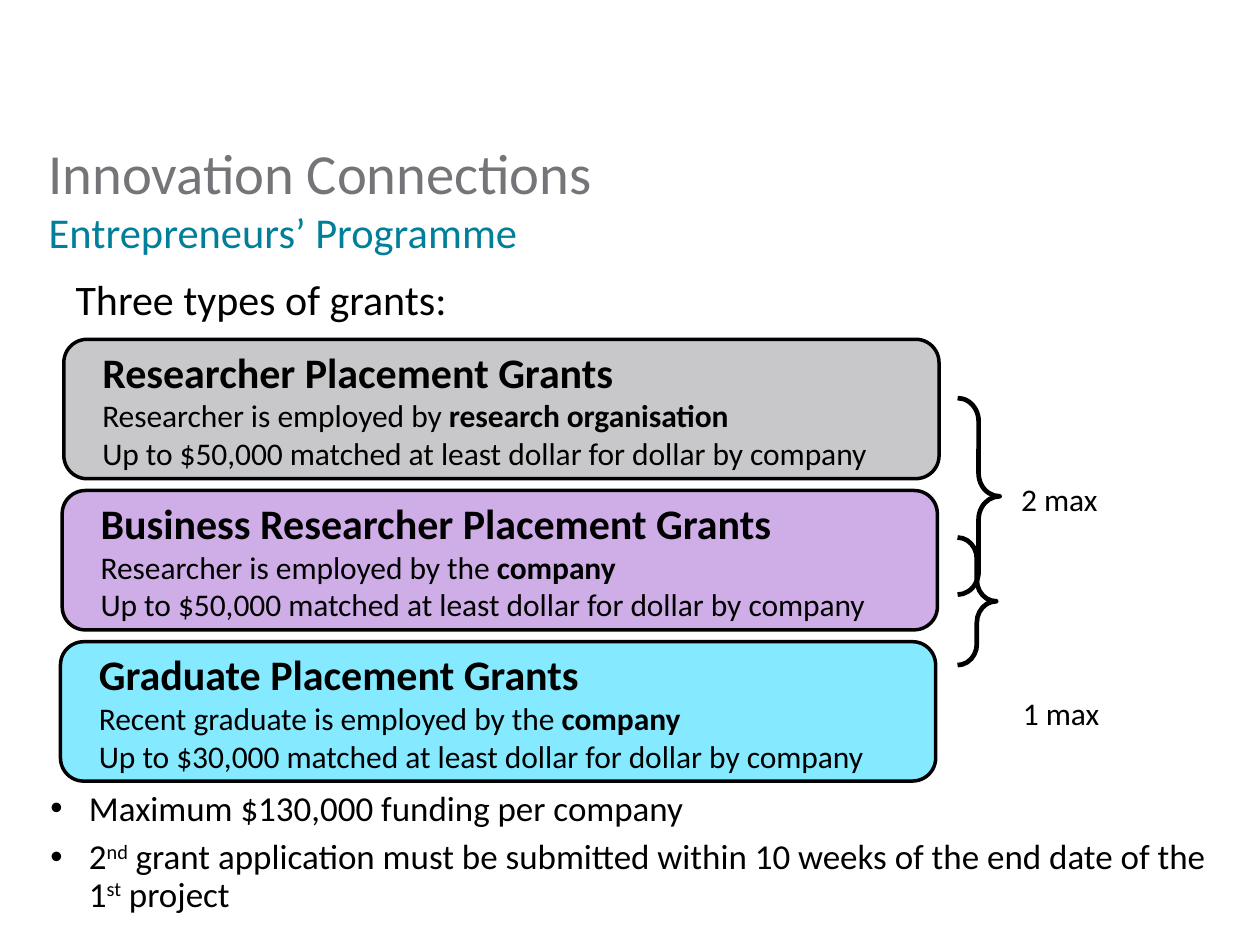
from lxml import etree
from pptx import Presentation
from pptx.dml.color import RGBColor
from pptx.enum.shapes import MSO_SHAPE
from pptx.enum.text import MSO_ANCHOR, PP_ALIGN
from pptx.oxml.ns import qn
from pptx.util import Inches, Pt

ROUNDED = MSO_SHAPE.ROUNDED_RECTANGLE
BRACE = MSO_SHAPE.RIGHT_BRACE
TOP, MIDDLE = MSO_ANCHOR.TOP, MSO_ANCHOR.MIDDLE
LEFT = PP_ALIGN.LEFT

BLACK = RGBColor(0x00, 0x00, 0x00)
TITLE_GREY = RGBColor(0x75, 0x75, 0x79)
TEAL = RGBColor(0x00, 0x7F, 0x9B)
CARD_GREY = RGBColor(0xC8, 0xC8, 0xCA)
CARD_PURPLE = RGBColor(0xCF, 0xAE, 0xE8)
CARD_CYAN = RGBColor(0x85, 0xE9, 0xFF)

GRANTS = [
    (0.38, CARD_GREY, "Researcher Placement Grants",
     "Researcher is employed by ", "research organisation", "$50,000"),
    (0.37, CARD_PURPLE, "Business Researcher Placement Grants",
     "Researcher is employed by the ", "company", "$50,000"),
    (0.36, CARD_CYAN, "Graduate Placement Grants",
     "Recent graduate is employed by the ", "company", "$30,000"),
]
CARD_TOP, CARD_STEP = 2.02, 0.9
BRACES = [(2.37, 0.25, 1.17), (3.2, 0.23, 0.76)]
LIMITS = [(5.98, 2.81, "2 max"), (5.99, 4.08, "1 max")]
CONDITIONS = [
    [("Maximum $130,000 funding per company", False)],
    [("2", False), ("nd", True),
     (" grant application must be submitted within 10 weeks of the end date of the 1", False),
     ("st", True), (" project", False)],
]


class SlideBuilder:
    font_name = "Calibri"

    def __init__(self, slide):
        self.slide = slide

    def set_frame(self, frame, margins, anchor=TOP, wrap=True):
        frame.word_wrap = wrap
        frame.vertical_anchor = anchor
        (frame.margin_left, frame.margin_top,
         frame.margin_right, frame.margin_bottom) = [Inches(m) for m in margins]

    def text_box(self, box, margins=(0, 0, 0, 0.05), wrap=True):
        frame = self.slide.shapes.add_textbox(*[Inches(v) for v in box]).text_frame
        self.set_frame(frame, margins, wrap=wrap)
        return frame

    def paragraph(self, frame, index, indent=0, hanging=0):
        paragraph = frame.add_paragraph() if index else frame.paragraphs[0]
        paragraph.alignment = LEFT
        properties = paragraph._p.get_or_add_pPr()
        properties.set("marL", str(Inches(indent)))
        properties.set("indent", str(Inches(-hanging)))
        return paragraph

    def run(self, paragraph, text, size, color=BLACK, bold=False, raised=False):
        run = paragraph.add_run()
        run.text = text
        font = run.font
        font.name, font.size, font.bold = self.font_name, Pt(size), bold
        font.color.rgb = color
        if raised:
            run._r.get_or_add_rPr().set("baseline", "30000")

    def title(self, box, text, subtitle):
        paragraph = self.paragraph(self.text_box(box, (0, 0, 0, 0)), 0)
        self.run(paragraph, text, 24.3, TITLE_GREY)
        paragraph.add_line_break()
        self.run(paragraph, subtitle, 18.2, TEAL)

    def heading(self, box, text):
        paragraph = self.paragraph(self.text_box(box), 0, 0.09)
        paragraph.line_spacing = 0.9
        self.run(paragraph, text, 18)

    def label(self, box, text):
        frame = self.text_box(box, (0.1, 0.05, 0.1, 0.05), wrap=False)
        self.run(self.paragraph(frame, 0), text, 13.5)

    def outlined_shape(self, kind, box, width):
        shape = self.slide.shapes.add_shape(kind, *[Inches(v) for v in box])
        shape.shadow.inherit = False
        shape.line.color.rgb = BLACK
        shape.line.width = Pt(width)
        return shape

    def card(self, box, fill, name, employment, employer, amount):
        shape = self.outlined_shape(ROUNDED, box, 1.5)
        shape.fill.solid()
        shape.fill.fore_color.rgb = fill
        frame = shape.text_frame
        self.set_frame(frame, (0.1, 0.06, 0.1, 0.06), MIDDLE)
        lines = [
            [(name, 18, True)],
            [(employment, 13.5, False), (employer, 13.5, True)],
            [(f"Up to {amount} matched at least dollar for dollar by company", 13.5, False)],
        ]
        for index, runs in enumerate(lines):
            paragraph = self.paragraph(frame, index, 0.09)
            for text, size, bold in runs:
                self.run(paragraph, text, size, bold=bold)

    def brace(self, box):
        shape = self.outlined_shape(BRACE, box, 2)
        shape.fill.background()
        shape.adjustments[0] = 0.55
        shape.adjustments[1] = 0.5

    def bullets(self, box, items):
        frame = self.text_box(box)
        for index, runs in enumerate(items):
            paragraph = self.paragraph(frame, index, 0.32, 0.23)
            properties = paragraph._p.get_or_add_pPr()
            etree.SubElement(properties, qn("a:buFont")).set("typeface", "Arial")
            etree.SubElement(properties, qn("a:buChar")).set("char", "•")
            paragraph.line_spacing = 0.9
            paragraph.space_before = Pt(2.2 if index else 0)
            paragraph.space_after = Pt(2.2)
            for text, raised in runs:
                self.run(paragraph, text, 15, raised=raised)


def main():
    presentation = Presentation()
    presentation.slide_width = Inches(7.5)
    presentation.slide_height = presentation.slide_width * 3 // 4
    builder = SlideBuilder(presentation.slides.add_slide(presentation.slide_layouts[6]))

    builder.heading((0.36, 1.66, 6.94, 0.31), "Three types of grants:")
    builder.title((0.29, 0.82, 7.09, 0.7),
                  "Innovation Connections", "Entrepreneurs’ Programme")
    builder.bullets((0.21, 4.71, 7.1, 0.79), CONDITIONS)
    for index, (left, *details) in enumerate(GRANTS):
        builder.card((left, CARD_TOP + index * CARD_STEP, 5.21, 0.83), *details)
    for top, width, height in BRACES:
        builder.brace((5.7, top, width, height))
    for left, top, text in LIMITS:
        builder.label((left, top, 0.66, 0.33), text)

    presentation.save("out.pptx")


if __name__ == "__main__":
    main()
